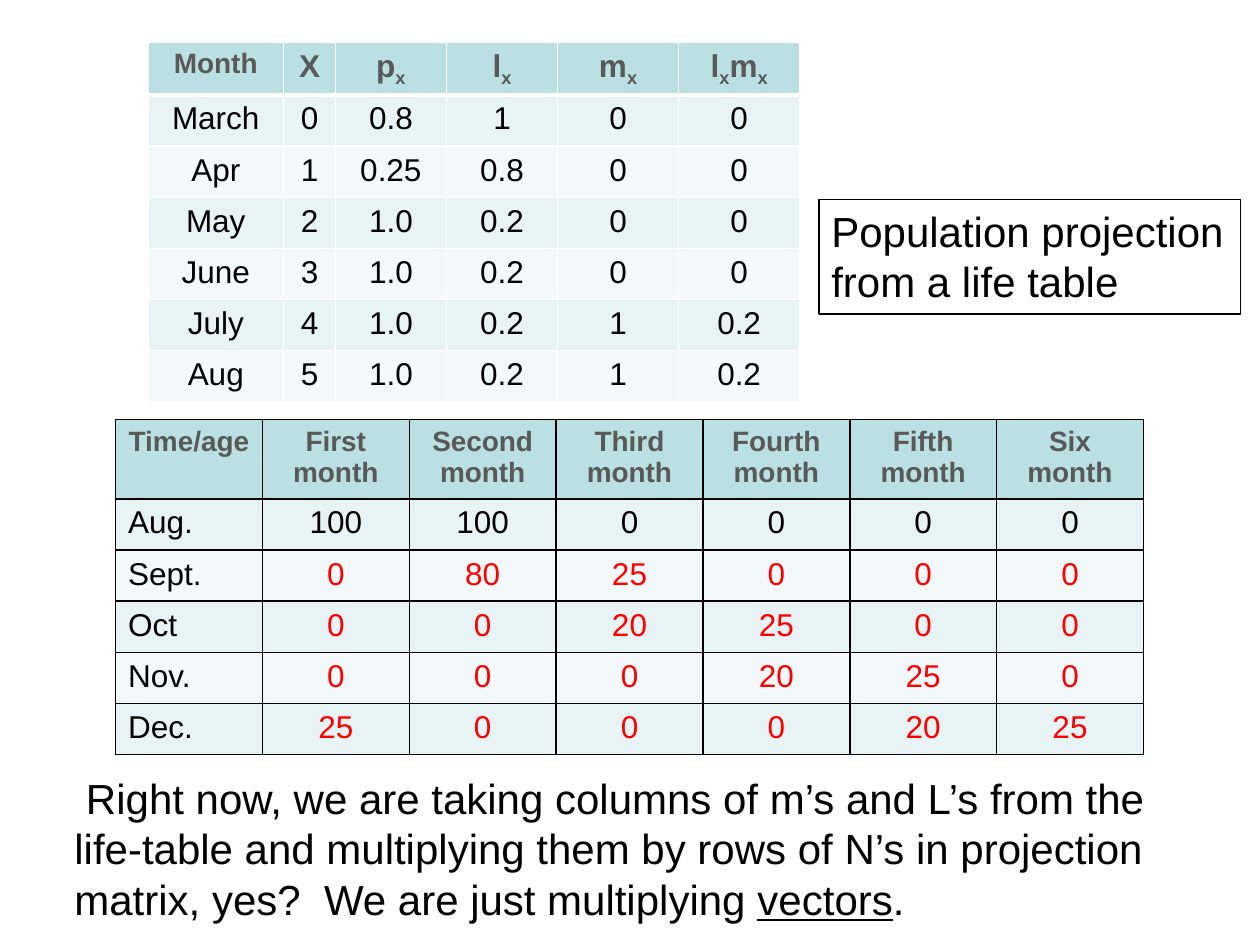
from dataclasses import dataclass

from lxml.etree import SubElement
from pptx import Presentation
from pptx.dml.color import RGBColor
from pptx.enum.shapes import MSO_SHAPE
from pptx.enum.text import MSO_ANCHOR, MSO_AUTO_SIZE, PP_ALIGN
from pptx.oxml.ns import qn
from pptx.util import Cm, Pt


@dataclass(frozen=True)
class Theme:
    font: str = "Arial"
    black: str = "000000"
    white: str = "FFFFFF"
    red: str = "FF0000"
    heading: str = "595959"
    header_fill: str = "BBE0E3"
    bands: tuple = ("E7F3F4", "F3F9FA")
    heading_size: int = 16
    table_size: int = 18
    body_size: int = 24


THEME = Theme()

LIFE_ROWS = [
    ["Month", "X", "p_x", "l_x", "m_x", "l_x_m_x"],
    ["March", "0", "0.8", "1", "0", "0"],
    ["Apr", "1", "0.25", "0.8", "0", "0"],
    ["May", "2", "1.0", "0.2", "0", "0"],
    ["June", "3", "1.0", "0.2", "0", "0"],
    ["July", "4", "1.0", "0.2", "1", "0.2"],
    ["Aug", "5", "1.0", "0.2", "1", "0.2"],
]
PROJECTION_ROWS = [
    ["Time/age"] + [f"{name} month" for name in
                    ("First", "Second", "Third", "Fourth", "Fifth", "Six")],
    ["Aug.", "100", "100", "0", "0", "0", "0"],
    ["Sept.", "0", "80", "25", "0", "0", "0"],
    ["Oct", "0", "0", "20", "25", "0", "0"],
    ["Nov.", "0", "0", "0", "20", "25", "0"],
    ["Dec.", "25", "0", "0", "0", "20", "25"],
]


def style_run(run, size, color=THEME.black, bold=False):
    run.font.name = THEME.font
    run.font.size = Pt(size)
    run.font.bold = bold
    run.font.color.rgb = RGBColor.from_string(color)


def write_cell(cell, text, size, color, bold, align):
    paragraph = cell.text_frame.paragraphs[0]
    paragraph.alignment = align
    for index, piece in enumerate(text.split("_")):
        run = paragraph.add_run()
        run.text = piece
        style_run(run, size, color, bold)
        if index % 2:
            run.font._element.set("baseline", "-25000")


def set_borders(cell, color, bottom_width=1):
    properties = cell._tc.get_or_add_tcPr()
    widths = {"a:lnL": 1, "a:lnR": 1, "a:lnT": 1, "a:lnB": bottom_width}
    for index, (tag, width) in enumerate(widths.items()):
        line = SubElement(properties, qn(tag), w=str(Pt(width)))
        SubElement(SubElement(line, qn("a:solidFill")), qn("a:srgbClr"), val=color)
        properties.insert(index, line)


def add_grid(slide, box, rows, column_widths, row_heights):
    left, top = box
    frame = slide.shapes.add_table(
        len(rows), len(column_widths), Cm(left), Cm(top),
        Cm(sum(column_widths)), Cm(sum(row_heights)))
    table = frame.table
    table.horz_banding = False
    for column, width in zip(table.columns, column_widths):
        column.width = Cm(width)
    for index, (row, height) in enumerate(zip(table.rows, row_heights)):
        row.height = Cm(height)
        for cell in row.cells:
            cell.fill.solid()
            fill = THEME.bands[(index - 1) % 2] if index else THEME.header_fill
            cell.fill.fore_color.rgb = RGBColor.from_string(fill)
    return table


def add_life_table(slide, box):
    table = add_grid(slide, box, LIFE_ROWS,
                     [2.74, 1.04, 2.24, 2.24, 2.44, 2.44], [1.03] * len(LIFE_ROWS))
    for row_index, values in enumerate(LIFE_ROWS):
        header = row_index == 0
        for column_index, text in enumerate(values):
            cell = table.cell(row_index, column_index)
            first = header and column_index == 0
            write_cell(cell, text, THEME.heading_size if first else THEME.table_size,
                       THEME.heading if header else THEME.black, header, PP_ALIGN.CENTER)
            set_borders(cell, THEME.white, 3 if header else 1)


def add_projection_table(slide, box):
    table = add_grid(slide, box, PROJECTION_ROWS, [2.96] * 7, [1.6] + [1.03] * 5)
    for row_index, values in enumerate(PROJECTION_ROWS):
        header = row_index == 0
        for column_index, text in enumerate(values):
            cell = table.cell(row_index, column_index)
            projected = row_index > 1 and column_index > 0
            color = THEME.heading if header else THEME.red if projected else THEME.black
            centred = header or column_index > 0
            write_cell(cell, text, THEME.heading_size if header else THEME.table_size,
                       color, header, PP_ALIGN.CENTER if centred else PP_ALIGN.LEFT)
            set_borders(cell, THEME.black)


def add_title_box(slide, box):
    shape = slide.shapes.add_shape(MSO_SHAPE.RECTANGLE, *map(Cm, box))
    shape.shadow.inherit = False
    shape.fill.background()
    shape.line.color.rgb = RGBColor.from_string(THEME.black)
    shape.line.width = Pt(0.75)
    text_frame = shape.text_frame
    text_frame.word_wrap = True
    text_frame.auto_size = MSO_AUTO_SIZE.SHAPE_TO_FIT_TEXT
    text_frame.vertical_anchor = MSO_ANCHOR.TOP
    text_frame.text = "Population projection from a life table"
    paragraph = text_frame.paragraphs[0]
    paragraph.alignment = PP_ALIGN.LEFT
    style_run(paragraph.runs[0], THEME.body_size)


def add_explanation(slide, box):
    text_frame = slide.shapes.add_textbox(*map(Cm, box)).text_frame
    text_frame.word_wrap = True
    text_frame.auto_size = MSO_AUTO_SIZE.SHAPE_TO_FIT_TEXT
    pieces = [
        " Right now, we are taking columns of m’s and L’s from the life-table and "
        "multiplying them by rows of N’s in projection matrix, yes?  "
        "We are just multiplying ",
        "vectors",
        ".",
    ]
    for piece in pieces:
        run = text_frame.paragraphs[0].add_run()
        run.text = piece
        style_run(run, THEME.body_size)
        run.font.underline = piece == "vectors"


def main():
    presentation = Presentation()
    presentation.slide_width, presentation.slide_height = Cm(25.4), Cm(19.05)
    slide = presentation.slides.add_slide(presentation.slide_layouts[6])
    add_projection_table(slide, (2.33, 8.46))
    add_life_table(slide, (2.98, 0.85))
    add_title_box(slide, (16.51, 4.02, 8.5, 2.31))
    add_explanation(slide, (1.25, 15.45, 23.1, 3.33))
    presentation.save("out.pptx")


if __name__ == "__main__":
    main()
